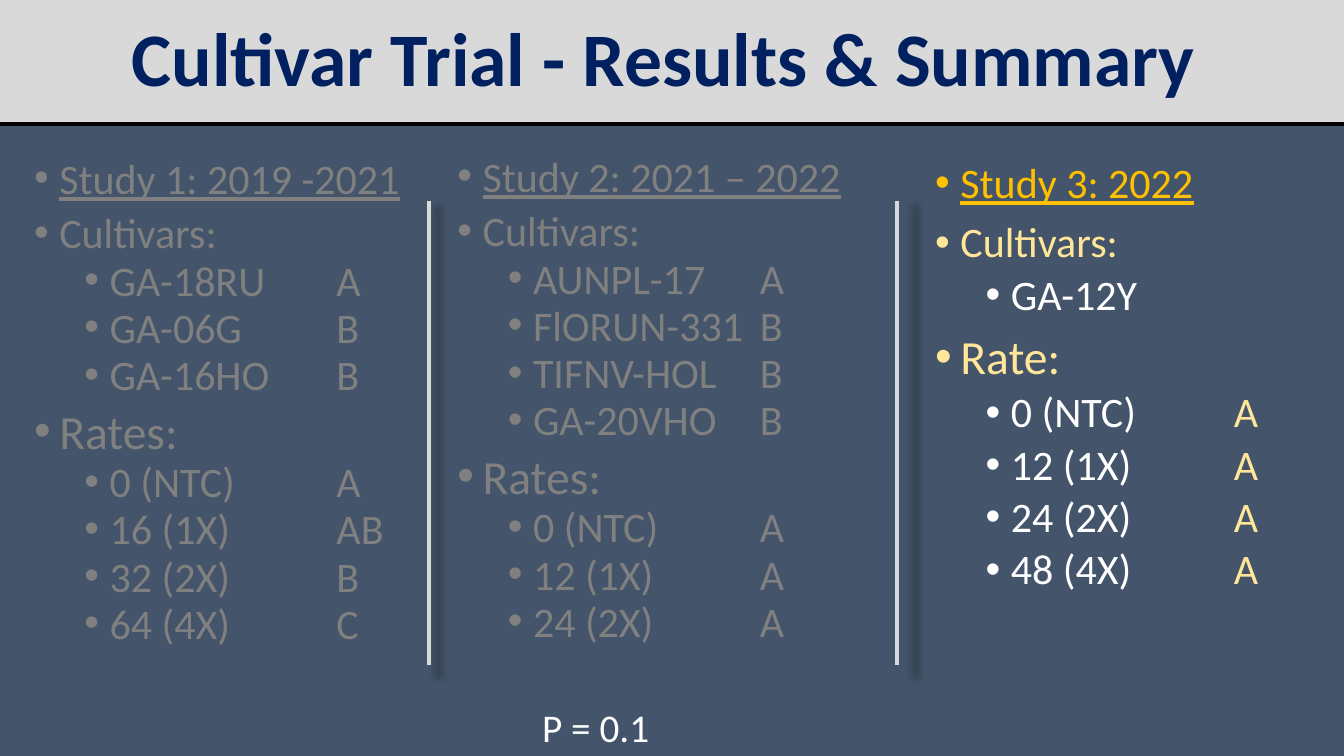
from dataclasses import dataclass

from lxml import etree
from pptx import Presentation
from pptx import util as u
from pptx.dml.color import RGBColor
from pptx.enum import shapes, text
from pptx.oxml import ns

Pt = u.Pt
FONT = "Calibri"
COLORS = {
    "slate": "44546A", "band": "D9D9D9", "navy": "002060", "black": "000000",
    "muted": "808080", "gold": "FFC000", "cream": "FFE699", "white": "FFFFFF",
}
SLIDE_W, SLIDE_H, TITLE_H = 960, 540, 88.56
GRADE_TAB = 216


@dataclass
class Study:
    left: float
    top: float
    width: float
    spacing: float
    title: str
    cultivars: list[tuple[str, str]]
    rate_heading: str
    rates: list[tuple[str, str]]
    title_color: str = "muted"
    heading_color: str = "muted"
    item_color: str = "muted"


@dataclass
class Rule:
    x1: float
    y1: float
    x2: float
    y2: float
    color: str
    width: float
    shadow: bool = False


STUDIES = [
    Study(17.28, 112.32, 302.4, 0.8, "Study 1: 2019 -2021",
          [("GA-18RU", "A"), ("GA-06G", "B"), ("GA-16HO", "B")],
          "Rates:",
          [("0 (NTC)", "A"), ("16 (1X)", "AB"), ("32 (2X)", "B"), ("64 (4X)", "C")]),
    Study(319.68, 110.88, 321.12, 0.8, "Study 2: 2021 – 2022",
          [("AUNPL-17", "A"), ("FlORUN-331", "B"), ("TIFNV-HOL", "B"), ("GA-20VHO", "B")],
          "Rates:",
          [("0 (NTC)", "A"), ("12 (1X)", "A"), ("24 (2X)", "A")]),
    Study(660.96, 112.32, 281.52, 0.9, "Study 3: 2022",
          [("GA-12Y", "")],
          "Rate:",
          [(rate, "A") for rate in ("0 (NTC)", "12 (1X)", "24 (2X)", "48 (4X)")],
          "gold", "cream", "white"),
]
TITLE_RULE = Rule(0, TITLE_H, SLIDE_W, TITLE_H, "black", 2.25)
DIVIDERS = [Rule(x, 143.28, x, 475.2, "band", 3, True) for x in (306.72, 640.8)]


def rgb(name: str) -> RGBColor:
    return RGBColor.from_string(COLORS[name])


def style(r, size: float, color: str, bold: bool = False, underline: bool = False) -> None:
    r.font.name, r.font.size = FONT, Pt(size)
    r.font.color.rgb = rgb(color)
    r.font.bold, r.font.underline = bold, underline


def add_box(slide, left: float, top: float, width: float, height: float):
    tf = slide.shapes.add_textbox(Pt(left), Pt(top), Pt(width), Pt(height)).text_frame
    tf.word_wrap = True
    return tf


def format_bullet(p, level: int, spacing: float, before: float) -> None:
    pPr = p._p.get_or_add_pPr()
    pPr.set("marL", str(Pt(18 + 36 * level)))
    pPr.set("indent", str(Pt(-18)))
    etree.SubElement(pPr, ns.qn("a:buFont"), typeface="Arial")
    etree.SubElement(pPr, ns.qn("a:buChar"), char="•")
    if level:
        tabs = etree.SubElement(pPr, ns.qn("a:tabLst"))
        etree.SubElement(tabs, ns.qn("a:tab"), pos=str(Pt(GRADE_TAB)), algn="l")
    p.level = level
    p.line_spacing = spacing
    p.space_before = Pt(before)


def add_study(slide, study: Study) -> None:
    tf = add_box(slide, study.left, study.top, study.width, 374.4)

    def heading(p, label: str, size: float, color: str, first: bool = False) -> None:
        p.text = label
        format_bullet(p, 0, study.spacing, 0 if first else 10)
        style(p.runs[0], size, color, underline=first)

    def items(rows: list[tuple[str, str]]) -> None:
        for label, grade in rows:
            p = tf.add_paragraph()
            p.text = f"{label}\t" if grade else label
            format_bullet(p, 1, study.spacing, 5)
            style(p.runs[0], 30, study.item_color)
            if grade:
                r = p.add_run()
                r.text = grade
                style(r, 30, study.heading_color)

    heading(tf.paragraphs[0], study.title, 30, study.title_color, first=True)
    heading(tf.add_paragraph(), "Cultivars:", 30, study.heading_color)
    items(study.cultivars)
    heading(tf.add_paragraph(), study.rate_heading, 34, study.heading_color)
    items(study.rates)


def add_rule(slide, rule: Rule) -> None:
    line = slide.shapes.add_connector(
        shapes.MSO_CONNECTOR.STRAIGHT, Pt(rule.x1), Pt(rule.y1), Pt(rule.x2), Pt(rule.y2))
    line.line.color.rgb = rgb(rule.color)
    line.line.width = Pt(rule.width)
    effects = etree.SubElement(line._element.spPr, ns.qn("a:effectLst"))
    if rule.shadow:
        shadow = etree.SubElement(effects, ns.qn("a:outerShdw"), blurRad=str(Pt(5)),
                                  sx="102000", sy="102000", algn="ctr", rotWithShape="0")
        color = etree.SubElement(shadow, ns.qn("a:srgbClr"), val=COLORS["black"])
        etree.SubElement(color, ns.qn("a:alpha"), val="40000")


def main() -> None:
    prs = Presentation()
    prs.slide_width, prs.slide_height = Pt(SLIDE_W), Pt(SLIDE_H)
    s = prs.slides.add_slide(prs.slide_layouts[6])
    s.background.fill.solid()
    s.background.fill.fore_color.rgb = rgb("slate")

    # Title band
    sp = s.shapes.add_shape(shapes.MSO_SHAPE.RECTANGLE, 0, 0, Pt(SLIDE_W), Pt(TITLE_H))
    sp.shadow.inherit = False
    sp.fill.solid()
    sp.fill.fore_color.rgb = rgb("band")
    sp.line.fill.background()
    tf = sp.text_frame
    tf.text = "Cultivar Trial - Results & Summary "
    tf.vertical_anchor = text.MSO_ANCHOR.MIDDLE
    p = tf.paragraphs[0]
    p.alignment = text.PP_ALIGN.CENTER
    p.line_spacing = 0.9
    style(p.runs[0], 54, "navy", bold=True)
    add_rule(s, TITLE_RULE)

    # Study columns
    for study in STUDIES:
        add_study(s, study)

    # Significance level
    tf = add_box(s, 380.16, 498.96, 126, 41.04)
    tf.text = "P = 0.1"
    style(tf.paragraphs[0].runs[0], 28, "white")

    # Column dividers
    for divider in DIVIDERS:
        add_rule(s, divider)

    prs.save("out.pptx")


if __name__ == "__main__":
    main()
